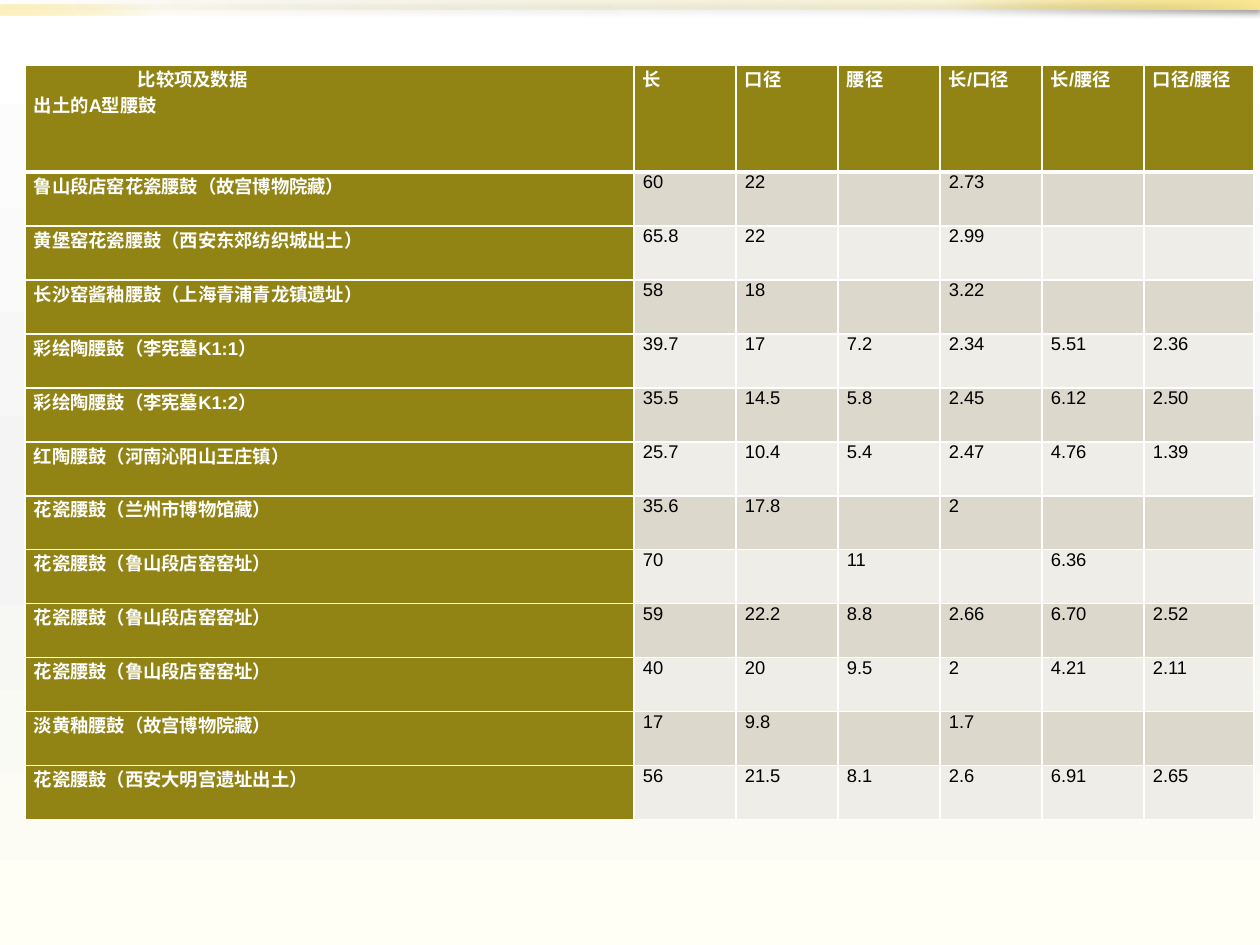
from lxml.etree import SubElement
from pptx import Presentation
from pptx.dml.color import RGBColor
from pptx.enum.shapes import MSO_SHAPE
from pptx.enum.text import PP_ALIGN
from pptx.oxml.ns import qn
from pptx.util import Emu, Pt

PIXEL = 914400 // 126
OLIVE, WHITE, BLACK = "918415", "FFFFFF", "000000"
BANDS = ["DCD9CC", "EEEDE8"]
COLUMN_WIDTHS = [609] + [102] * 5 + [110]
HEADER_HEIGHT, ROW_HEIGHT = 107, 54
HEADER_INDENT = 104

HEADER = ["比较项及数据\n出土的A型腰鼓", "长", "口径", "腰径", "长/口径", "长/腰径", "口径/腰径"]
DRUMS = [
    ["鲁山段店窑花瓷腰鼓（故宫博物院藏）", "60", "22", "", "2.73", "", ""],
    ["黄堡窑花瓷腰鼓（西安东郊纺织城出土）", "65.8", "22", "", "2.99", "", ""],
    ["长沙窑酱釉腰鼓（上海青浦青龙镇遗址）", "58", "18", "", "3.22", "", ""],
    ["彩绘陶腰鼓（李宪墓K1:1）", "39.7", "17", "7.2", "2.34", "5.51", "2.36"],
    ["彩绘陶腰鼓（李宪墓K1:2）", "35.5", "14.5", "5.8", "2.45", "6.12", "2.50"],
    ["红陶腰鼓（河南沁阳山王庄镇）", "25.7", "10.4", "5.4", "2.47", "4.76", "1.39"],
    ["花瓷腰鼓（兰州市博物馆藏）", "35.6", "17.8", "", "2", "", ""],
    ["花瓷腰鼓（鲁山段店窑窑址）", "70", "", "11", "", "6.36", ""],
    ["花瓷腰鼓（鲁山段店窑窑址）", "59", "22.2", "8.8", "2.66", "6.70", "2.52"],
    ["花瓷腰鼓（鲁山段店窑窑址）", "40", "20", "9.5", "2", "4.21", "2.11"],
    ["淡黄釉腰鼓（故宫博物院藏）", "17", "9.8", "", "1.7", "", ""],
    ["花瓷腰鼓（西安大明宫遗址出土）", "56", "21.5", "8.1", "2.6", "6.91", "2.65"],
]


def px(value):
    return Emu(value * PIXEL)


def color(value):
    return RGBColor.from_string(value)


def add_color(parent, value, opacity=100):
    element = SubElement(parent, qn("a:srgbClr"), val=value)
    if opacity < 100:
        SubElement(element, qn("a:alpha"), val=str(opacity * 1000))


def set_gradient(fill, owner, angle, stops):
    """Fill with (position, colour, opacity) stops; the angle runs clockwise."""
    fill.gradient()
    gradient = owner.find(".//" + qn("a:gradFill"))
    for child in list(gradient):
        gradient.remove(child)
    stop_list = SubElement(gradient, qn("a:gsLst"))
    for position, value, opacity in stops:
        stop = SubElement(stop_list, qn("a:gs"), pos=str(position * 1000))
        add_color(stop, value, opacity)
    SubElement(gradient, qn("a:lin"), ang=str(angle * 60000), scaled="0")


def add_bar(slide, top, width, angle, stops):
    bar = slide.shapes.add_shape(MSO_SHAPE.RECTANGLE, 0, px(top), px(width), px(10))
    set_gradient(bar.fill, bar.element.spPr, angle, stops)
    bar.line.fill.background()
    bar.shadow.inherit = False
    return bar


def add_shadow(shape):
    effects = shape.element.spPr.find(qn("a:effectLst"))
    shadow = SubElement(effects, qn("a:outerShdw"), blurRad=str(Pt(3.1)),
                        dist=str(Pt(1.6)), dir="5400000", rotWithShape="0")
    add_color(shadow, BLACK, 38)


def set_borders(cell, top, bottom):
    properties = cell._tc.get_or_add_tcPr()
    for side, width in (("L", 1), ("R", 1), ("T", top), ("B", bottom)):
        line = SubElement(properties, qn("a:ln" + side), w=str(Pt(width)))
        add_color(SubElement(line, qn("a:solidFill")), WHITE)


def format_cell(cell, text, fill, is_heading):
    cell.margin_left = cell.margin_right = px(9)
    cell.margin_top = cell.margin_bottom = 0
    cell.fill.solid()
    cell.fill.fore_color.rgb = color(fill)
    cell.text_frame.text = text
    for paragraph in cell.text_frame.paragraphs:
        paragraph.alignment = PP_ALIGN.JUSTIFY
        for run in paragraph.runs:
            run.font.name = "Arial"
            run.font.size = Pt(10.5)
            run.font.bold = is_heading
            run.font.color.rgb = color(WHITE if is_heading else BLACK)


def add_drum_table(slide):
    rows = [HEADER] + DRUMS
    height = HEADER_HEIGHT + ROW_HEIGHT * len(DRUMS)
    table = slide.shapes.add_table(len(rows), len(HEADER), px(25), px(65),
                                   px(sum(COLUMN_WIDTHS)), px(height)).table
    for column, width in zip(table.columns, COLUMN_WIDTHS):
        column.width = px(width)
    for row_index, values in enumerate(rows):
        table.rows[row_index].height = px(ROW_HEIGHT if row_index else HEADER_HEIGHT)
        for column_index, text in enumerate(values):
            cell = table.cell(row_index, column_index)
            is_heading = row_index == 0 or column_index == 0
            fill = OLIVE if is_heading else BANDS[(row_index - 1) % 2]
            set_borders(cell, 3 if row_index == 1 else 1, 3 if row_index == 0 else 1)
            format_cell(cell, text, fill, is_heading)
    first_line = table.cell(0, 0).text_frame.paragraphs[0]
    first_line._p.get_or_add_pPr().set("marL", str(px(HEADER_INDENT)))


def main():
    presentation = Presentation()
    presentation.slide_width, presentation.slide_height = px(1260), px(945)
    slide = presentation.slides.add_slide(presentation.slide_layouts[6])
    set_gradient(slide.background.fill, slide.element, 90,
                 [(0, WHITE, 100), (55, "F4F4F4", 100), (100, "FFFFF5", 100)])
    top_bar = add_bar(slide, 0, 1260, 315,
                      [(0, "7B6E00", 0), (75, "F0D23E", 20), (100, "FBE894", 100)])
    add_shadow(top_bar)
    add_bar(slide, 5, 630, 135,
            [(0, "7B6E00", 0), (75, "F0D23E", 5), (100, "FBE894", 60)])
    add_drum_table(slide)
    presentation.save("out.pptx")


if __name__ == "__main__":
    main()
